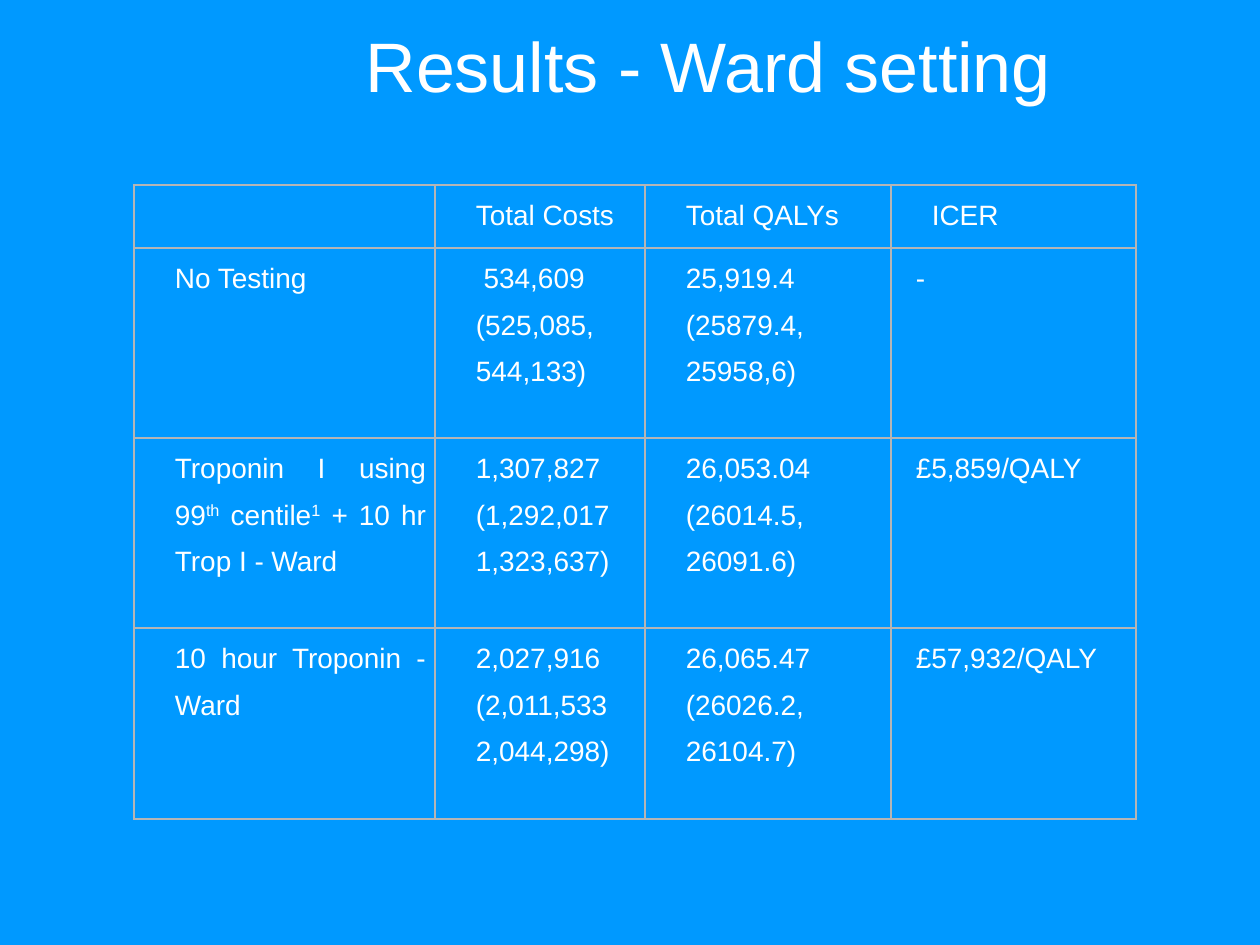
from lxml import etree
from pptx import Presentation
from pptx.dml.color import RGBColor
from pptx.enum.text import MSO_ANCHOR, MSO_AUTO_SIZE, PP_ALIGN
from pptx.oxml.ns import qn
from pptx.util import Emu, Pt

LEFT, JUST = PP_ALIGN.LEFT, PP_ALIGN.JUSTIFY
TOP = MSO_ANCHOR.TOP
NO_FIT = MSO_AUTO_SIZE.NONE

PX = 914400 // 126
FONT = "Arial"
COLORS = {"back": "0099FF", "text": "FFFFFF", "line": "B5B5B5"}

TITLE = "Results - Ward setting"
# Lines of a cell are split by \n; text between ^ marks is superscript.
ROWS = [
    ["", "Total Costs", "Total QALYs", "ICER"],
    ["No Testing", " 534,609\n(525,085,\n544,133)",
     "25,919.4\n(25879.4,\n25958,6)", "-"],
    ["Troponin I using 99^th^ centile^1^ + 10 hr Trop I - Ward",
     "1,307,827\n(1,292,017\n1,323,637)",
     "26,053.04\n(26014.5,\n26091.6)", "£5,859/QALY"],
    ["10 hour Troponin - Ward", "2,027,916\n(2,011,533\n2,044,298)",
     "26,065.47\n(26026.2,\n26104.7)", "£57,932/QALY"],
]
WIDTHS = [301, 210, 246, 245]
HEIGHTS = [63, 190, 190, 191]
INDENT, SLIM = 32, 16


def px(n):
    return Emu(n * PX)


def color(name):
    return RGBColor.from_string(COLORS[name])


def style(font, size):
    font.name, font.size = FONT, Pt(size)
    font.color.rgb = color("text")


def border(cell):
    props = cell._tc.get_or_add_tcPr()
    for side in ("lnL", "lnR", "lnT", "lnB"):
        line = etree.SubElement(props, qn("a:" + side), w=str(Pt(1)))
        fill = etree.SubElement(line, qn("a:solidFill"))
        etree.SubElement(fill, qn("a:srgbClr"), val=COLORS["line"])


def write(cell, text, indent):
    frame = cell.text_frame
    frame.text = text.replace("^", "") if "^" not in text else ""
    for para in frame.paragraphs:
        para.alignment, para.line_spacing = JUST, 1.5
        props = para._p.get_or_add_pPr()
        props.set("marL", str(px(indent)))
        props.set("indent", "0")
    if "^" in text:
        for i, part in enumerate(text.split("^")):
            run = frame.paragraphs[0].add_run()
            run.text = part
            if i % 2:
                run.font._element.set("baseline", "30000")
    for para in frame.paragraphs:
        for run in para.runs:
            style(run.font, 16)


def add_title(slide):
    title = slide.shapes.title
    title.left, title.top = px(353), px(16)
    title.width, title.height = px(735), px(97)
    frame = title.text_frame
    frame.text = TITLE
    frame.word_wrap, frame.auto_size = False, NO_FIT
    frame.vertical_anchor = TOP
    para = frame.paragraphs[0]
    para.alignment, para.line_spacing = LEFT, 1.0
    style(para.runs[0].font, 40)


def add_grid(slide):
    grid = slide.shapes.add_table(
        len(ROWS), len(WIDTHS), px(134), px(185),
        px(sum(WIDTHS)), px(sum(HEIGHTS))).table
    grid.first_row = grid.horz_banding = False
    for col, width in zip(grid.columns, WIDTHS):
        col.width = px(width)
    for r, (row, height) in enumerate(zip(ROWS, HEIGHTS)):
        grid.rows[r].height = px(height)
        for c, text in enumerate(row):
            cell = grid.cell(r, c)
            cell.margin_left = cell.margin_right = px(9)
            cell.margin_top = cell.margin_bottom = 0
            border(cell)
            cell.fill.background()
            write(cell, text, SLIM if r and c == 3 else INDENT)


def main():
    deck = Presentation()
    deck.slide_width, deck.slide_height = px(1260), px(945)
    slide = deck.slides.add_slide(deck.slide_layouts[5])
    slide.background.fill.solid()
    slide.background.fill.fore_color.rgb = color("back")
    add_title(slide)
    add_grid(slide)
    deck.save("out.pptx")


if __name__ == "__main__":
    main()
